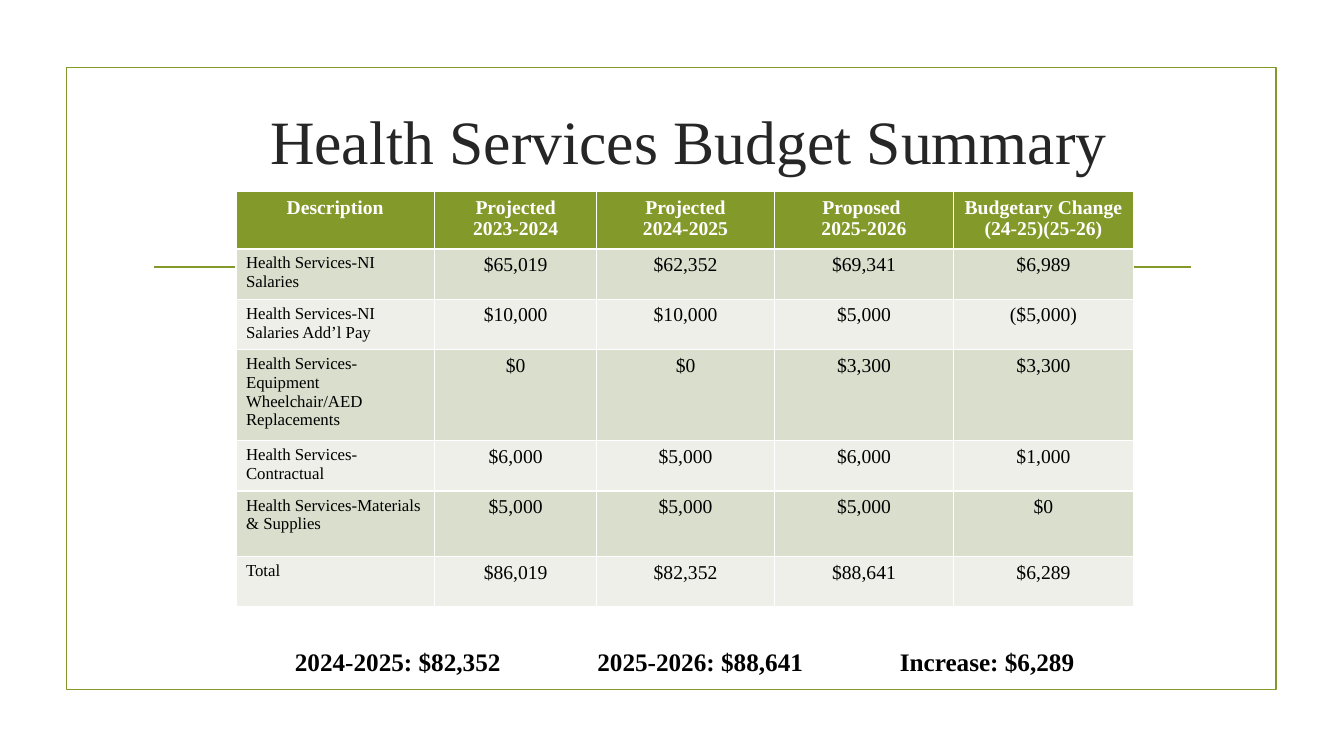
from pptx import Presentation
from pptx.dml.color import RGBColor
from pptx.enum.shapes import MSO_CONNECTOR as Link, MSO_SHAPE as Shape
from pptx.enum.text import MSO_ANCHOR as Anchor, PP_ALIGN as Align
from pptx.oxml.ns import qn
from pptx.util import Inches, Pt
from lxml.etree import SubElement as Sub

GREEN, WHITE, BLACK = "83992A", "FFFFFF", "000000"
BANDS = ["D9DECD", "EDEFE8"]
COLS = [1.97, 1.61, 1.76, 1.78, 1.78]
ROWS = [0.57, 0.5, 0.5, 0.84, 0.5, 0.65, 0.5]
DATA = [
    ["Description", "Projected\n2023-2024", "Projected\n2024-2025",
     "Proposed \n2025-2026", "Budgetary Change \n(24-25)(25-26)"],
    ["Health Services-NI Salaries", "$65,019", "$62,352", "$69,341", "$6,989"],
    ["Health Services-NI Salaries Add’l Pay", "$10,000", "$10,000", "$5,000", "($5,000)"],
    ["Health Services-Equipment Wheelchair/AED Replacements", "$0", "$0", "$3,300", "$3,300"],
    ["Health Services-Contractual", "$6,000", "$5,000", "$6,000", "$1,000"],
    ["Health Services-Materials & Supplies", "$5,000", "$5,000", "$5,000", "$0"],
    ["Total", "$86,019", "$82,352", "$88,641", "$6,289"],
]
SUMS = ["2024-2025: $82,352", "2025-2026: $88,641", "Increase: $6,289"]


def rgb(code):
    return RGBColor.from_string(code)


class Page:
    font = "Times New Roman"
    width = Pt(1.25)

    def __init__(self, deck):
        self.slide = deck.slides.add_slide(deck.slide_layouts[6])
        self.shapes = self.slide.shapes

    def style(self, frame, size, color, bold=False, align=Align.CENTER):
        for para in frame.paragraphs:
            para.alignment = align
            for run in para.runs:
                font = run.font
                font.name, font.size, font.bold = self.font, Pt(size), bold
                font.color.rgb = rgb(color)

    def edge(self, line, color):
        line.color.rgb = rgb(color)
        line.width = self.width

    def frame(self, x, y, w, h, color):
        box = self.shapes.add_shape(Shape.RECTANGLE, *map(Inches, (x, y, w, h)))
        box.shadow.inherit = False
        box.fill.background()
        self.edge(box.line, color)

    def rule(self, x1, y1, x2, y2, color):
        line = self.shapes.add_connector(Link.STRAIGHT, *map(Inches, (x1, y1, x2, y2)))
        self.edge(line.line, color)
        Sub(line._element.spPr, qn("a:effectLst"))

    def text(self, x, y, w, h, words, size, color, bold=False, tabs=()):
        box = self.shapes.add_textbox(*map(Inches, (x, y, w, h)))
        frame = box.text_frame
        frame.word_wrap = True
        frame.vertical_anchor = Anchor.MIDDLE
        frame.text = words
        if tabs:
            stops = Sub(frame.paragraphs[0]._p.get_or_add_pPr(), qn("a:tabLst"))
            for tab in tabs:
                Sub(stops, qn("a:tab"), pos=str(Inches(tab)), algn="l")
        self.style(frame, size, color, bold)

    def table(self, x, y, cols, rows, data):
        grid = self.shapes.add_table(len(rows), len(cols), Inches(x), Inches(y),
                                     Inches(sum(cols)), Inches(sum(rows))).table
        for col, w in zip(grid.columns, cols):
            col.width = Inches(w)
        for r, (row, h, words) in enumerate(zip(grid.rows, rows, data)):
            row.height = Inches(h)
            head = r == 0
            for c, (cell, word) in enumerate(zip(row.cells, words)):
                label = c == 0 and not head
                cell.text = word
                cell.fill.solid()
                cell.fill.fore_color.rgb = rgb(GREEN if head else BANDS[(r - 1) % 2])
                self.style(cell.text_frame, 12 if label else 14,
                           WHITE if head else BLACK, head,
                           Align.LEFT if label else Align.CENTER)


def main():
    deck = Presentation()
    deck.slide_width, deck.slide_height = Inches(13.33), Inches(7.5)
    page = Page(deck)
    page.frame(0.66, 0.67, 12, 6.17, GREEN)
    page.rule(1.53, 2.65, 11.81, 2.65, GREEN)
    page.text(1.71, 0.87, 10.4, 1.03, "Health Services Budget Summary ", 44, "262626")
    page.table(2.34, 1.9, COLS, ROWS, DATA)
    page.text(2.42, 6.36, 8.74, 0.4, "\t".join(SUMS), 18, BLACK, True, (3, 6))
    deck.save("out.pptx")


if __name__ == "__main__":
    main()
